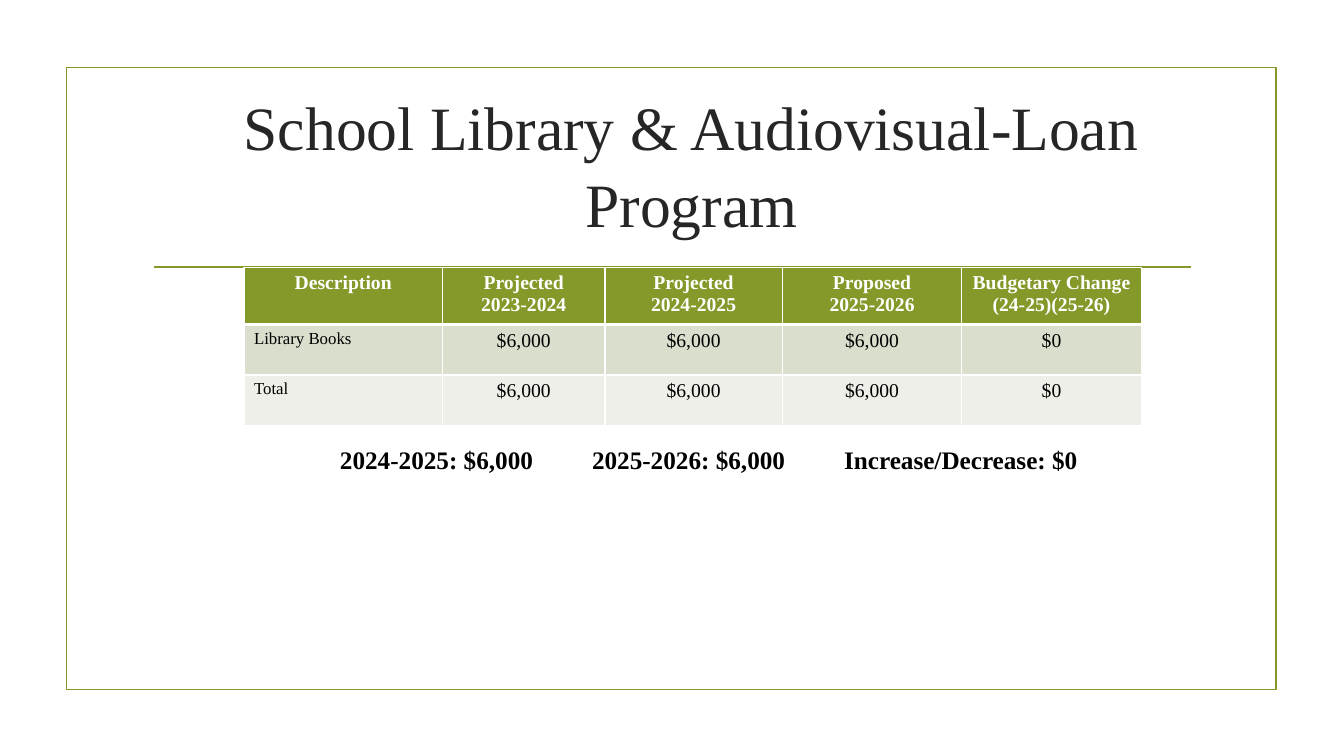
from lxml import etree
from pptx import Presentation
from pptx.dml.color import RGBColor
from pptx.enum.shapes import MSO_CONNECTOR, MSO_SHAPE
from pptx.enum.text import MSO_ANCHOR, PP_ALIGN
from pptx.oxml.ns import qn
from pptx.util import Inches, Pt

RECT, LINE = MSO_SHAPE.RECTANGLE, MSO_CONNECTOR.STRAIGHT
LEFT, CENTER = PP_ALIGN.LEFT, PP_ALIGN.CENTER
TOP, MIDDLE = MSO_ANCHOR.TOP, MSO_ANCHOR.MIDDLE

FONT = "Times New Roman"
COLORS = {"green": "83992A", "title": "262626", "text": "000000",
          "white": "FFFFFF", "sage": "D9DECD", "pale": "EDEFE8"}
TITLE = "School Library & Audiovisual-Loan Program"
TOTALS = "\t\t".join(["2024-2025: $6,000", "2025-2026: $6,000",
                      "Increase/Decrease: $0"])
ROWS = [
    ["Description", "Projected\n2023-2024", "Projected\n2024-2025",
     "Proposed\n2025-2026", "Budgetary Change\n(24-25)(25-26)"],
    ["Library Books", "$6,000", "$6,000", "$6,000", "$0"],
    ["Total", "$6,000", "$6,000", "$6,000", "$0"],
]
WIDTHS = [1.97, 1.61, 1.76, 1.78, 1.78]
HEIGHTS = [0.57, 0.5, 0.5]
FILLS = ["green", "sage", "pale"]


def color(name):
    return RGBColor.from_string(COLORS[name])


def write(frame, text, size, tone, bold=False, align=CENTER):
    frame.text = text
    for para in frame.paragraphs:
        para.alignment = align
        for run in para.runs:
            font = run.font
            font.name, font.size, font.bold = FONT, Pt(size), bold
            font.color.rgb = color(tone)


def add_text(slide, box, text, size, tone, bold=False, anchor=TOP):
    frame = slide.shapes.add_textbox(*map(Inches, box)).text_frame
    frame.word_wrap = True
    frame.vertical_anchor = anchor
    write(frame, text, size, tone, bold)
    return frame


def edge(cell, bottom):
    """Draw white cell borders, with the bottom one in its own width."""
    props = cell._tc.get_or_add_tcPr()
    sides = [("a:lnL", 1), ("a:lnR", 1), ("a:lnT", 1), ("a:lnB", bottom)]
    for spot, (tag, width) in enumerate(sides):
        line = etree.Element(qn(tag), w=str(Pt(width)))
        fill = etree.SubElement(line, qn("a:solidFill"))
        etree.SubElement(fill, qn("a:srgbClr"), val=COLORS["white"])
        props.insert(spot, line)


def add_frame(slide):
    frame = slide.shapes.add_shape(RECT, *map(Inches, (0.66, 0.67, 12, 6.17)))
    frame.shadow.inherit = False
    frame.fill.background()
    rule = slide.shapes.add_connector(
        LINE, *map(Inches, (1.53, 2.65, 11.81, 2.65)))
    etree.SubElement(rule._element.spPr, qn("a:effectLst"))
    for shape in (frame, rule):
        shape.line.color.rgb = color("green")
        shape.line.width = Pt(1.25)


def add_budget(slide):
    box = (2.42, 2.65, sum(WIDTHS), sum(HEIGHTS))
    table = slide.shapes.add_table(
        len(ROWS), len(WIDTHS), *map(Inches, box)).table
    for col, width in zip(table.columns, WIDTHS):
        col.width = Inches(width)
    for r, texts in enumerate(ROWS):
        table.rows[r].height = Inches(HEIGHTS[r])
        head = r == 0
        for c, text in enumerate(texts):
            cell = table.cell(r, c)
            cell.fill.solid()
            cell.fill.fore_color.rgb = color(FILLS[r])
            edge(cell, 3 if head else 1)
            label = c == 0 and not head
            write(cell.text_frame, text, 12 if label else 14,
                  "white" if head else "text", head,
                  LEFT if label else CENTER)


def main():
    deck = Presentation()
    deck.slide_width, deck.slide_height = Inches(13.33), Inches(7.5)
    slide = deck.slides.add_slide(deck.slide_layouts[6])
    add_frame(slide)
    title = add_text(slide, (1.61, 0.9, 10.5, 1.43), TITLE, 44, "title",
                     anchor=MIDDLE)
    title.paragraphs[0].line_spacing = 1.04
    add_budget(slide)
    add_text(slide, (2.66, 4.36, 8.74, 0.4), TOTALS, 18, "text", bold=True)
    deck.save("out.pptx")


if __name__ == "__main__":
    main()
